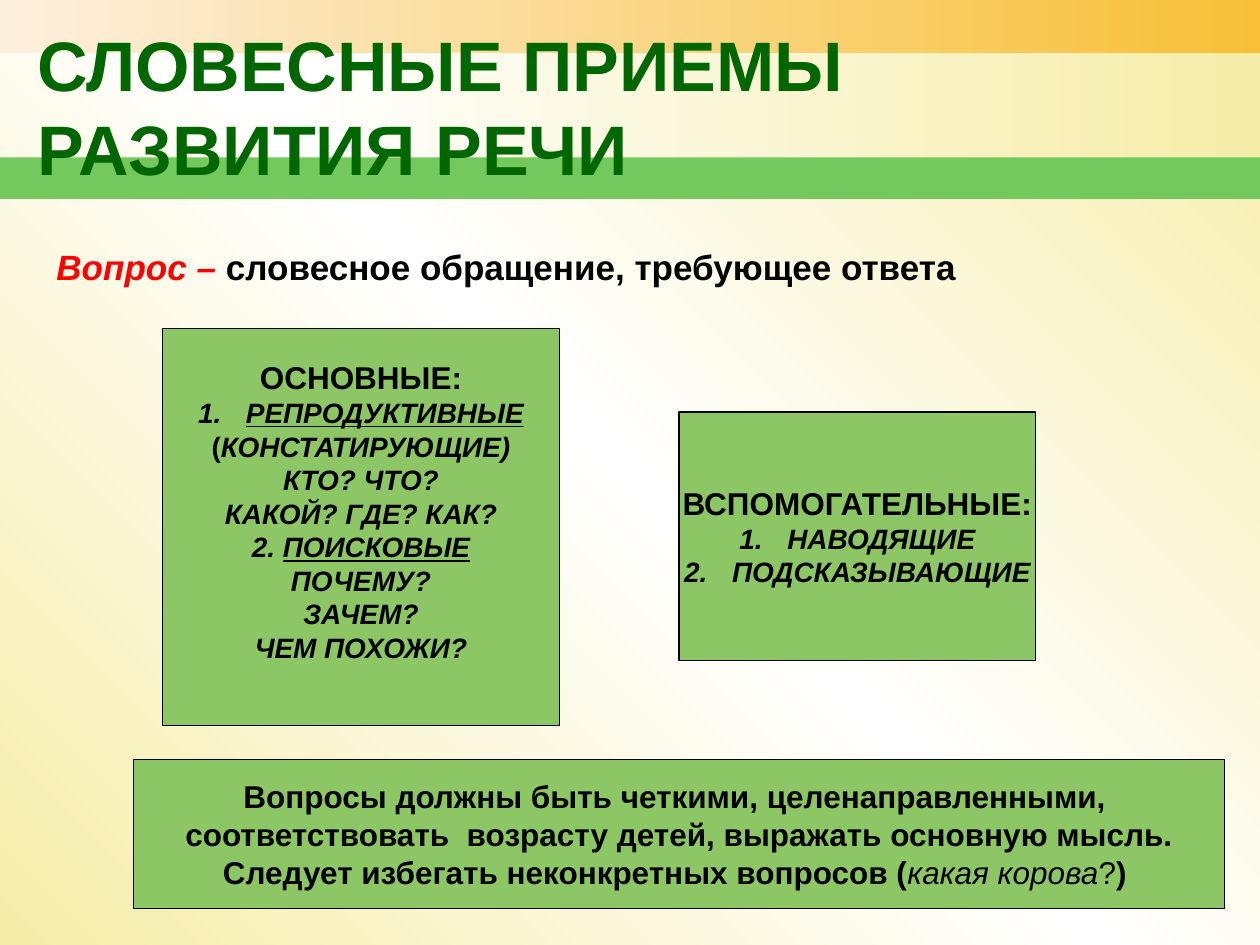
"""Builds a slide on the kinds of question used in speech development."""
from copy import deepcopy
from dataclasses import dataclass

from lxml import etree
from pptx import Presentation
from pptx import util as u
from pptx.dml.color import RGBColor
from pptx.enum import shapes, text
from pptx.oxml.ns import qn


@dataclass(frozen=True)
class Theme:
    """Colours, font and type sizes of the slide."""
    font: str = "Arial"
    ink: str = "000000"
    title_ink: str = "006600"
    accent: str = "FF0000"
    panel: str = "8DC765"
    stripe: str = "73C95B"
    cream: str = "F6EDA8"
    white: str = "FFFFFF"
    peach: str = "FDEFDD"
    amber: str = "F7C037"
    title_size: int = 40
    lead_size: int = 20
    head_size: int = 18
    item_size: int = 16


THEME = Theme()
CELL = u.Inches(0.1)
COLUMNS, ROWS = 100, 75
HANG = u.Inches(0.38)


def write(para, words, size=THEME.head_size, color=THEME.ink, bold=True,
          italic=False, underline=False):
    """Add one formatted span to a paragraph."""
    span = para.add_run()
    span.text = words
    font = span.font
    font.name, font.size = THEME.font, u.Pt(size)
    font.bold, font.italic, font.underline = bold, italic, underline
    font.color.rgb = RGBColor.from_string(color)


def item(words, **style):
    """Return a span in the style of a list item."""
    return words, {"size": THEME.item_size, "italic": True, **style}


def paint_gradient(fill, owner, colors, angle=0):
    """Fill with evenly spaced colours along an angle."""
    fill.gradient()
    fill.gradient_angle = angle
    first = owner.xpath(".//a:gs")[0]
    for _ in colors[2:]:
        first.addnext(deepcopy(first))
    for index, (stop, color) in enumerate(zip(fill.gradient_stops, colors)):
        stop.position = index / (len(colors) - 1)
        stop.color.rgb = RGBColor.from_string(color)


class Painter:
    """Holds the theme and the current slide."""

    def __init__(self, slide, theme):
        """Remember the slide and its theme."""
        self.slide, self.theme = slide, theme

    def background(self, *colors, angle):
        """Paint the slide background."""
        paint_gradient(self.slide.background.fill, self.slide.element, colors, angle)

    def rectangle(self, *place):
        """Add a plain rectangle placed in grid cells."""
        box = self.slide.shapes.add_shape(
            shapes.MSO_SHAPE.RECTANGLE, *(round(n * CELL) for n in place))
        box.shadow.inherit = False
        return box

    def band(self, place, *colors):
        """Add a borderless band in one colour or a gradient."""
        box = self.rectangle(*place)
        box.line.fill.background()
        if len(colors) > 1:
            paint_gradient(box.fill, box.element, colors)
        else:
            box.fill.solid()
            box.fill.fore_color.rgb = RGBColor.from_string(colors[0])

    def fill_text(self, box, lines, anchor, align, wrap, hanging=False, numbered=()):
        """Write lines of spans, numbering the chosen ones."""
        frame = box.text_frame
        frame.word_wrap, frame.vertical_anchor = wrap, anchor
        for index, spans in enumerate(lines):
            para = frame.add_paragraph() if index else frame.paragraphs[0]
            para.alignment = align
            if hanging:
                props = para._p.get_or_add_pPr()
                props.set("marL", str(HANG))
                props.set("indent", str(-HANG))
                if index in numbered:
                    etree.SubElement(props, qn("a:buFont")).set("typeface", self.theme.font)
                    etree.SubElement(props, qn("a:buAutoNum")).set("type", "arabicPeriod")
            for words, style in spans:
                write(para, words, **style)

    def label(self, place, spans, anchor):
        """Add a wrapped, left-aligned text box."""
        box = self.slide.shapes.add_textbox(*(round(n * CELL) for n in place))
        self.fill_text(box, [spans], anchor, text.PP_ALIGN.LEFT, True)

    def panel(self, place, lines, foot=0.05, **layout):
        """Add an outlined green panel with centred text."""
        box = self.rectangle(*place)
        box.fill.solid()
        box.fill.fore_color.rgb = RGBColor.from_string(self.theme.panel)
        box.line.color.rgb = RGBColor.from_string(self.theme.ink)
        box.line.width = u.Pt(0.75)
        box.text_frame.margin_bottom = u.Inches(foot)
        self.fill_text(box, lines, text.MSO_ANCHOR.MIDDLE, text.PP_ALIGN.CENTER,
                       False, **layout)


def main():
    """Build and save the deck."""
    deck = Presentation()
    deck.slide_width, deck.slide_height = COLUMNS * CELL, ROWS * CELL
    page = Painter(deck.slides.add_slide(deck.slide_layouts[6]), THEME)

    page.background(THEME.cream, THEME.white, THEME.cream, angle=45)
    page.band((0, 0, COLUMNS, 4.2), THEME.peach, THEME.amber)
    page.band((21.7, 4.2, COLUMNS - 21.7, 8.3), THEME.white, THEME.cream)
    page.band((0, 12.5, COLUMNS, 3.3), THEME.stripe)

    page.label((2, 0.9, 85, 14.9),
               [("СЛОВЕСНЫЕ ПРИЕМЫ РАЗВИТИЯ РЕЧИ",
                 {"size": THEME.title_size, "color": THEME.title_ink})],
               text.MSO_ANCHOR.MIDDLE)
    page.label((3.5, 15.8, 91.3, 7.5),
               [("Вопрос – ", {"size": THEME.lead_size, "color": THEME.accent,
                               "italic": True}),
                ("словесное обращение, требующее ответа", {"size": THEME.lead_size})],
               text.MSO_ANCHOR.BOTTOM)

    page.panel((12.9, 26.1, 31.5, 31.5), [
        [("ОСНОВНЫЕ:", {})],
        [item("РЕПРОДУКТИВНЫЕ", underline=True)],
        [item("(", italic=False), item("КОНСТАТИРУЮЩИЕ)")],
        [item("КТО? ЧТО?")],
        [item("КАКОЙ? ГДЕ? КАК?")],
        [item("2. "), item("ПОИСКОВЫЕ", underline=True)],
        [item("ПОЧЕМУ?")],
        [item("ЗАЧЕМ?")],
        [item("ЧЕМ ПОХОЖИ?")],
    ], foot=0.31, hanging=True, numbered=(1,))
    page.panel((53.9, 32.7, 28.3, 19.7), [
        [("ВСПОМОГАТЕЛЬНЫЕ:", {})],
        [item("НАВОДЯЩИЕ")],
        [item("ПОДСКАЗЫВАЮЩИЕ")],
    ], hanging=True, numbered=(1, 2))
    page.panel((10.6, 60.3, 86.6, 11.8), [
        [("Вопросы должны быть четкими, целенаправленными, ", {})],
        [("соответствовать  возрасту детей, выражать основную мысль.", {})],
        [("Следует избегать неконкретных вопросов (", {}),
         ("какая корова", {"bold": False, "italic": True}),
         ("?", {"bold": False}), (") ", {})],
    ])
    deck.save("out.pptx")


if __name__ == "__main__":
    main()
